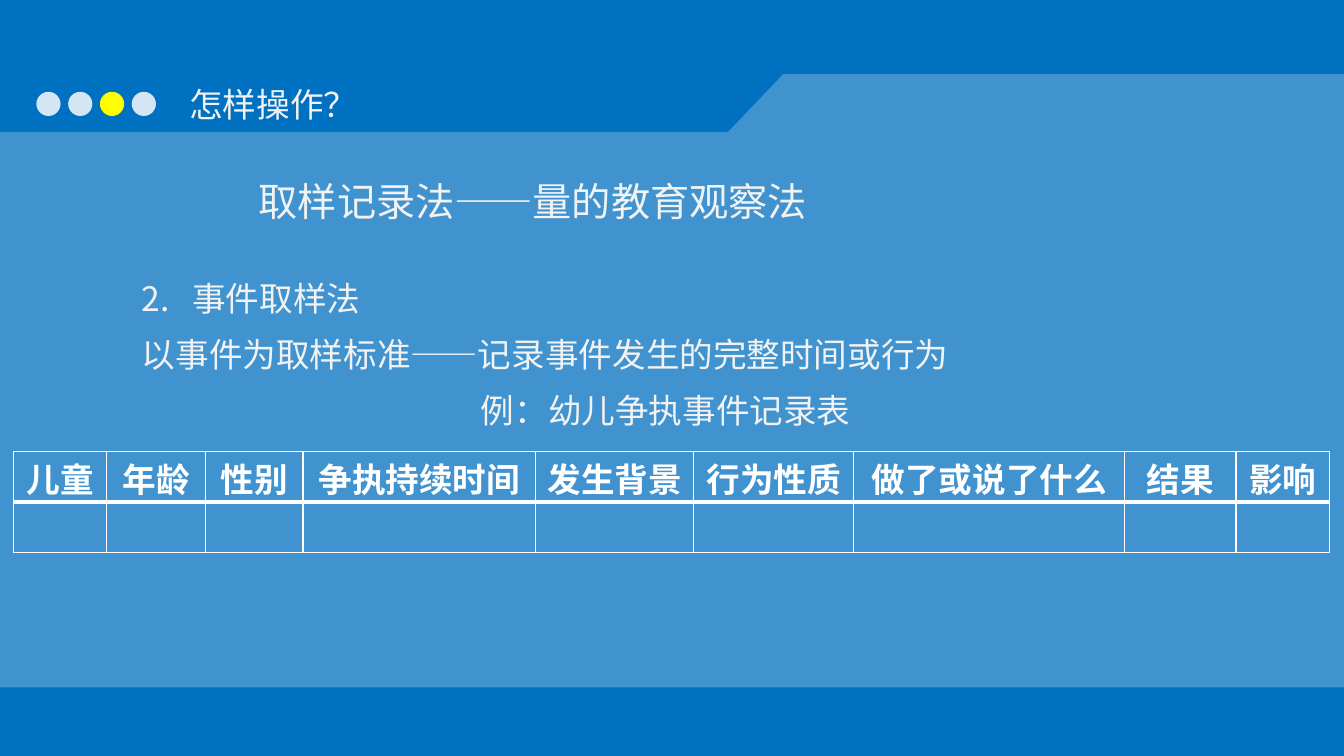
"""Build the slide on event sampling with its dispute record table."""
from dataclasses import dataclass

from lxml import etree
from pptx import Presentation
from pptx.dml.color import RGBColor
from pptx.enum.shapes import MSO_SHAPE
from pptx.enum.text import MSO_ANCHOR, PP_ALIGN
from pptx.oxml.ns import qn
from pptx.util import Pt

OVAL = MSO_SHAPE.OVAL
MIDDLE = MSO_ANCHOR.MIDDLE
LEFT, CENTER = PP_ALIGN.LEFT, PP_ALIGN.CENTER


@dataclass(frozen=True)
class Theme:
    background: str = "0070C0"
    white: str = "FFFFFF"
    text: str = "F2F2F2"
    active: str = "FFFF00"
    font: str = "Noto Sans CJK SC"
    table_font: str = "Calibri"
    title_size: int = 28
    body_size: int = 24


theme = Theme()


def write(paragraph, text, *, size=theme.body_size, color=theme.text, font=theme.font,
          bold=False, align=LEFT, line=37.4, before=2, after=0.6, hanging=0):
    paragraph.alignment = align
    paragraph.line_spacing = Pt(line)
    paragraph.space_before, paragraph.space_after = Pt(before), Pt(after)
    if hanging:
        properties = paragraph._p.get_or_add_pPr()
        properties.set("marL", str(Pt(hanging)))
        properties.set("indent", str(-Pt(hanging)))
    span = paragraph.add_run()
    span.text = text
    span.font.size, span.font.bold, span.font.name = Pt(size), bold, font
    span.font.color.rgb = RGBColor.from_string(color)
    etree.SubElement(span._r.get_or_add_rPr(), qn("a:ea"), typeface=font)


def paint(shape, color, opacity=100):
    shape.shadow.inherit = False
    shape.line.fill.background()
    shape.fill.solid()
    shape.fill.fore_color.rgb = RGBColor.from_string(color)
    if opacity < 100:
        tint = shape.fill._xPr.find(qn("a:solidFill"))[0]
        etree.SubElement(tint, qn("a:alpha"), val=str(opacity * 1000))


deck = Presentation()
deck.slide_width, deck.slide_height = Pt(960), Pt(540)
page = deck.slides.add_slide(deck.slide_layouts[6])
page.background.fill.solid()
page.background.fill.fore_color.rgb = RGBColor.from_string(theme.background)

outline = [(0, 94.3), (520, 94.3), (559.4, 53), (960, 53), (960, 491), (0, 491)]
points = [(Pt(x), Pt(y)) for x, y in outline]
builder = page.shapes.build_freeform(*points[0], scale=1.0)
builder.add_line_segments(points[1:], close=True)
paint(builder.convert_to_shape(), theme.white, 25)

for index in range(4):
    dot = page.shapes.add_shape(OVAL, Pt(26 + 22.7 * index), Pt(65.6), Pt(17.3), Pt(17.3))
    if index == 2:
        paint(dot, theme.active)
    else:
        paint(dot, theme.white, 83)

text_boxes = [
    ((128.2, 54.7, 283.7, 36), [("怎样操作？", dict(line=30.5, before=0, after=0))]),
    ((177.8, 113, 693.4, 51.1),
     [("取样记录法——量的教育观察法", dict(size=theme.title_size, line=43.7))]),
    ((94.3, 186.5, 762.5, 274.3),
     [("2.\t事件取样法", dict(hanging=36)),
      ("以事件为取样标准——记录事件发生的完整时间或行为", dict(hanging=36)),
      ("例：幼儿争执事件记录表", dict(hanging=36, align=CENTER))]),
]
for bounds, lines in text_boxes:
    box = page.shapes.add_textbox(*map(Pt, bounds))
    frame = box.text_frame
    frame.word_wrap = True
    for index, (text, style) in enumerate(lines):
        paragraph = frame.add_paragraph() if index else frame.paragraphs[0]
        write(paragraph, text, **style)

columns = [("儿童", 66.5), ("年龄", 70.3), ("性别", 69.8), ("争执持续时间", 166.4),
           ("发生背景", 112.9), ("行为性质", 114.3), ("做了或说了什么", 193.5),
           ("结果", 79.4), ("影响", 67)]
total_width = sum(width for _, width in columns)
table = page.shapes.add_table(2, len(columns), Pt(9.8), Pt(322.4),
                              Pt(total_width), Pt(72.4)).table
table.first_row = table.horz_banding = False
for row in table.rows:
    row.height = Pt(36.2)
for column, (heading, width) in enumerate(columns):
    table.columns[column].width = Pt(width)
    for row in range(2):
        cell = table.cell(row, column)
        cell.vertical_anchor = MIDDLE
        cell.margin_top = cell.margin_bottom = 0
        cell.margin_left = cell.margin_right = Pt(3.6)
        properties = cell._tc.get_or_add_tcPr()
        edges = {"lnL": 1, "lnR": 1, "lnT": 1 if row == 0 else 3, "lnB": 3 if row == 0 else 1}
        for edge, weight in edges.items():
            border = etree.SubElement(properties, qn(f"a:{edge}"), w=str(Pt(weight)))
            solid = etree.SubElement(border, qn("a:solidFill"))
            etree.SubElement(solid, qn("a:srgbClr"), val=theme.white)
        cell.fill.background()
    write(table.cell(0, column).text_frame.paragraphs[0], heading, color=theme.white,
          font=theme.table_font, bold=True, align=CENTER, line=36, before=0, after=0)

deck.save("out.pptx")
